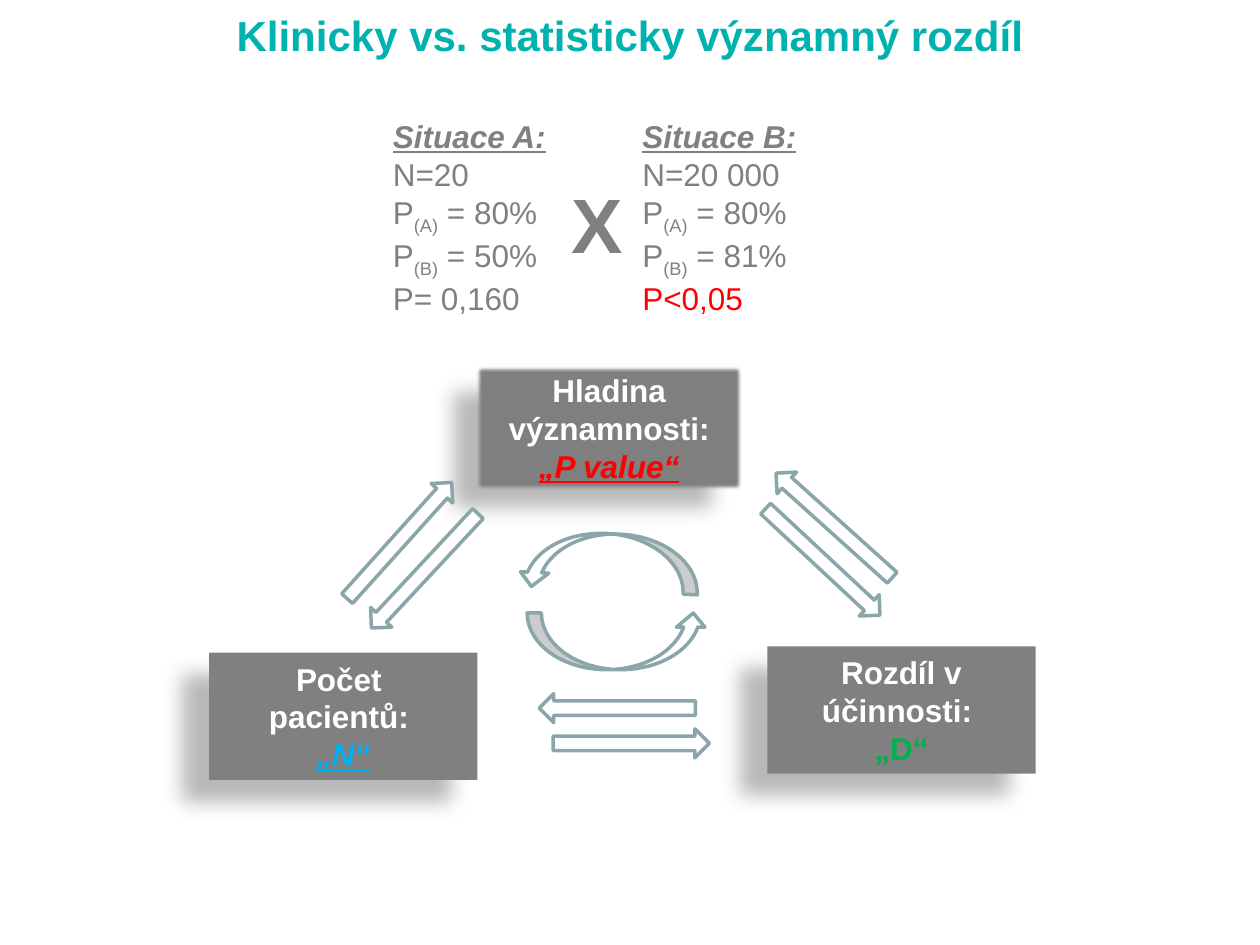
import pptx
import pptx.dml.color
import pptx.enum.shapes
import pptx.enum.text
import pptx.oxml
import pptx.oxml.ns
import pptx.util
from pptx.util import Inches

SHAPE = pptx.enum.shapes.MSO_SHAPE
ALIGN = pptx.enum.text.PP_ALIGN
ANCHOR = pptx.enum.text.MSO_ANCHOR

GREY, WHITE, RED, TEAL = "808080", "FFFFFF", "FF0000", "00B2AF"
BLUE, GREEN, ARROW_LINE = "00B0F0", "00B050", "8AA6A8"


def color(value):
    return pptx.dml.color.RGBColor.from_string(value)


def style_span(span, size, fill, bold=False, italic=False, underline=False):
    font = span.font
    font.name = "Arial"
    font.size = pptx.util.Pt(size)
    font.color.rgb = color(fill)
    font.bold, font.italic, font.underline = bold, italic, underline


def add_span(para, text, size, fill, **emphasis):
    span = para.add_run()
    span.text = text
    style_span(span, size, fill, **emphasis)
    return span


def add_text_box(page, left, top, width, height, wrap=True):
    box = page.shapes.add_textbox(Inches(left), Inches(top), Inches(width), Inches(height))
    box.text_frame.word_wrap = wrap
    return box.text_frame


def add_title(page, left, top, width, height):
    para = add_text_box(page, left, top, width, height).paragraphs[0]
    para.alignment = ALIGN.CENTER
    add_span(para, "Klinicky vs. statisticky významný rozdíl", 24, TEAL, bold=True)


def add_situation(page, left, top, name, count, share_b, p_value, p_color):
    frame = add_text_box(page, left, top, 1.56, 1.92)
    para = frame.paragraphs[0]
    add_span(para, f"Situace {name}:", 18, GREY, bold=True, italic=True, underline=True)
    para.add_line_break()
    add_span(para, f"N={count}", 18, GREY)
    para.add_line_break()
    for group, share in (("A", "80%"), ("B", share_b)):
        if group == "B":
            para = frame.add_paragraph()
        add_span(para, "P", 18, GREY)
        subscript = add_span(para, f"({group})", 18, GREY)
        subscript.font._element.set("baseline", "-25000")
        add_span(para, f" = {share}", 18, GREY)
    add_span(frame.add_paragraph(), p_value, 18, p_color)


def add_versus(page, left, top):
    frame = add_text_box(page, left, top, 0.6, 0.84, wrap=False)
    add_span(frame.paragraphs[0], "X", 44, GREY, bold=True)


def add_effects(shape, soft_edge):
    """Give the shape a blurred shadow to the lower left, and soft edges if asked."""
    edge = '<a:softEdge rad="31750"/>' if soft_edge else ""
    shape._element.spPr.append(pptx.oxml.parse_xml(
        f'<a:effectLst {pptx.oxml.ns.nsdecls("a")}>'
        '<a:outerShdw blurRad="149860" dist="250190" dir="8460000" algn="ctr" rotWithShape="0">'
        '<a:srgbClr val="000000"><a:alpha val="28000"/></a:srgbClr></a:outerShdw>'
        f'{edge}</a:effectLst>'))


def add_factor(page, left, top, paragraphs, soft_edge=False):
    """Draw a grey box; each paragraph is a list of (text, colour, emphasis)."""
    box = page.shapes.add_shape(SHAPE.RECTANGLE, Inches(left), Inches(top),
                                Inches(2.13), Inches(1.01))
    box.fill.solid()
    box.fill.fore_color.rgb = color(GREY)
    box.line.fill.background()
    add_effects(box, soft_edge)
    frame = box.text_frame
    frame.word_wrap = True
    frame.vertical_anchor = ANCHOR.MIDDLE
    for index, spans in enumerate(paragraphs):
        para = frame.add_paragraph() if index else frame.paragraphs[0]
        para.alignment = ALIGN.CENTER
        for text, fill, emphasis in spans:
            add_span(para, text, 18, fill, bold=True, **emphasis)


def add_arrow(page, kind, center_x, center_y, width, height, rotation):
    arrow = page.shapes.add_shape(kind, Inches(center_x - width / 2),
                                  Inches(center_y - height / 2),
                                  Inches(width), Inches(height))
    arrow.shadow.inherit = False
    arrow.rotation = rotation
    arrow.fill.solid()
    arrow.fill.fore_color.rgb = color(WHITE)
    arrow.line.color.rgb = color(ARROW_LINE)
    arrow.line.width = pptx.util.Pt(2)


def add_triangle(page):
    slanted = {"italic": True, "underline": True}
    add_factor(page, 3.77, 2.89, [[("Hladina významnosti: ", WHITE, {}),
                                   ("„P value“", RED, slanted)]], soft_edge=True)
    add_factor(page, 1.66, 5.18, [[("Počet ", WHITE, {})], [("pacientů: ", WHITE, {})],
                                  [("„N“", BLUE, slanted)]])
    add_factor(page, 6.09, 5.13, [[("Rozdíl v účinnosti: ", WHITE, {})],
                                  [("„D“", GREEN, {})]])

    for center_x, center_y, rotation in ((4.9, 5.09, 0), (4.83, 4.46, 182.9)):
        add_arrow(page, SHAPE.CURVED_UP_ARROW, center_x, center_y, 1.43, 0.45, rotation)
    for center_x, center_y, rotation in (
            (3.17, 4.29, 42), (3.37, 4.53, 223),
            (6.62, 4.17, 312), (6.53, 4.46, 133),
            (4.9, 5.62, 270), (5.01, 5.9, 90)):
        add_arrow(page, SHAPE.UP_ARROW, center_x, center_y, 0.23, 1.24, rotation)


def main():
    deck = pptx.Presentation()
    deck.slide_width, deck.slide_height = Inches(10), Inches(7.5)
    page = deck.slides.add_slide(deck.slide_layouts[6])
    add_title(page, 0, 0.03, 10, 0.44)
    add_triangle(page)
    add_situation(page, 3.02, 0.88, "A", "20", "50%", "P= 0,160", GREY)
    add_situation(page, 5, 0.88, "B", "20 000", "81%", "P<0,05", RED)
    add_versus(page, 4.44, 1.35)
    deck.save("out.pptx")


if __name__ == "__main__":
    main()
